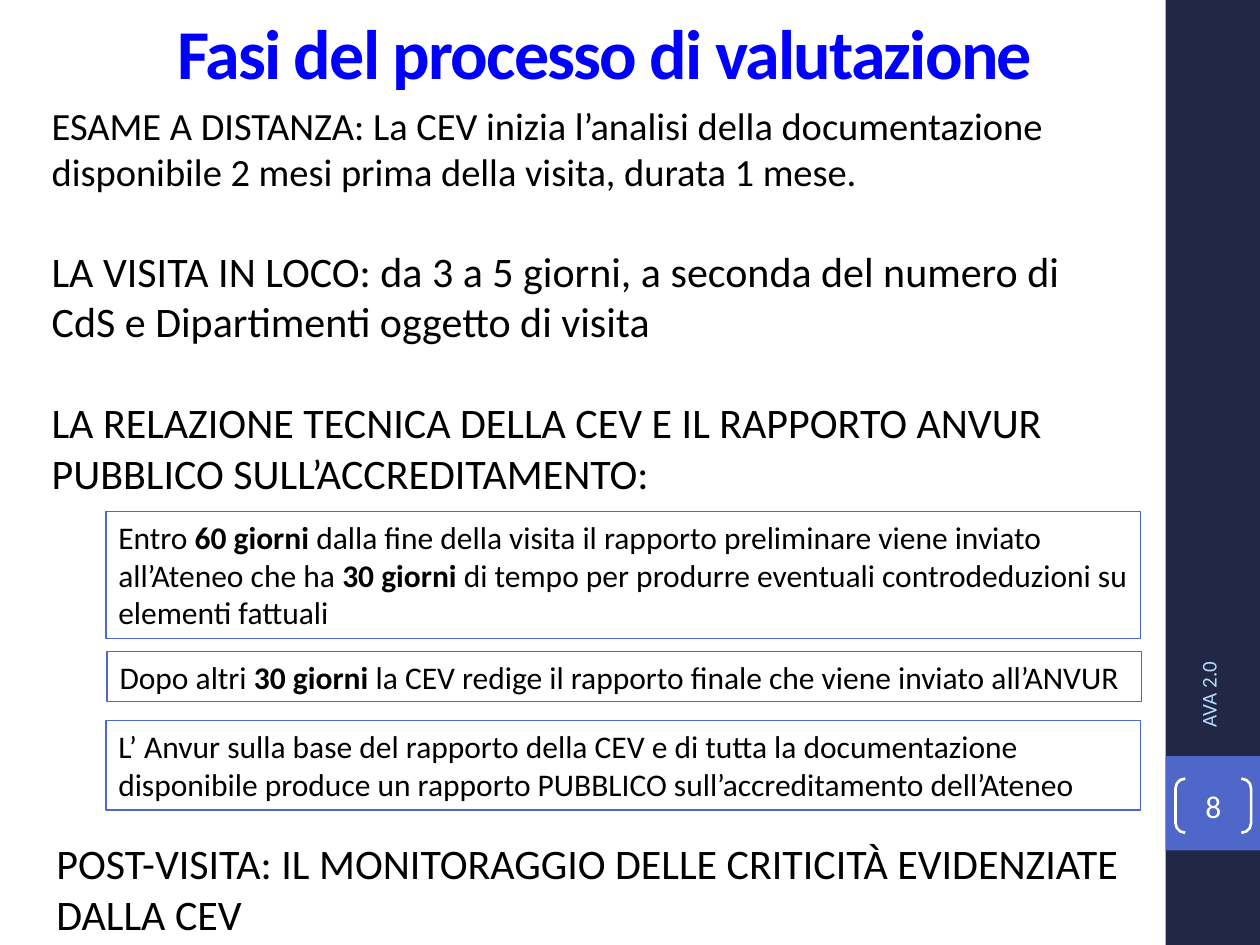
"""Build the slide on the phases of the evaluation process."""
from pptx import Presentation
from pptx import util as u
from pptx.dml.color import RGBColor
from pptx.enum import shapes, text
from pptx.oxml.ns import qn

COLS, ROWS = 40, 30
NAVY, BLUE, PALE, WHITE, BLACK = "212745", "4E67C8", "B4DCFA", "FFFFFF", "000000"


def tint(hue):
    """Turn a hex string into a colour."""
    return RGBColor.from_string(hue)


class Deck:
    """Hold the style and the current slide."""

    font = "Calibri"

    def __init__(self):
        """Open a deck with one title and body slide."""
        self.prs = Presentation()
        self.prs.slide_width, self.prs.slide_height = u.Inches(10), u.Inches(7.5)
        self.slide = self.prs.slides.add_slide(self.prs.slide_layouts[1])

    def box(self, col, row, wide, high):
        """Turn grid columns and rows into lengths."""
        x, y = self.prs.slide_width / COLS, self.prs.slide_height / ROWS
        return [round(n) for n in (col * x, row * y, wide * x, high * y)]

    def place(self, item, area):
        """Move a placeholder to an area of the grid."""
        item.left, item.top, item.width, item.height = self.box(*area)
        return item

    def label(self, item, lines, size, hue=BLACK, align=text.PP_ALIGN.LEFT,
              anchor=text.MSO_ANCHOR.TOP):
        """Fill in lines, with bold parts between asterisks."""
        frame = item.text_frame
        frame.word_wrap = True
        frame.auto_size = text.MSO_AUTO_SIZE.NONE
        frame.vertical_anchor = anchor
        for i, line in enumerate(lines):
            para = frame.add_paragraph() if i else frame.paragraphs[0]
            para.alignment = align
            for j, part in enumerate(line.split("*")):
                if not part:
                    continue
                run = para.add_run()
                run.text = part
                run.font.bold = j % 2 == 1
                run.font.name, run.font.size = self.font, u.Pt(size)
                run.font.color.rgb = tint(hue)
        return frame

    def title(self, words, area, size, hue):
        """Set the title in bold, tight letters."""
        item = self.place(self.slide.shapes.title, area)
        frame = self.label(item, [f"*{words}*"], size, hue,
                           text.PP_ALIGN.CENTER, text.MSO_ANCHOR.MIDDLE)
        frame.paragraphs[0].runs[0].font._element.set("spc", "-100")

    def body(self, lines, area, sizes, gap):
        """Set the main list without bullets."""
        item = self.place(self.slide.placeholders[1], area)
        frame = self.label(item, lines, sizes[0])
        for i, (para, size) in enumerate(zip(frame.paragraphs, sizes)):
            para.space_before = u.Pt(gap if i else 0)
            para.runs[0].font.size = u.Pt(size)
            props = para._p.get_or_add_pPr()
            props.set("marL", "0")
            props.set("indent", "0")
            props.append(props.makeelement(qn("a:buNone"), {}))

    def shape(self, area, fill=None, line=None, width=0.75, kind="RECTANGLE"):
        """Add a preset shape."""
        item = self.slide.shapes.add_shape(
            getattr(shapes.MSO_SHAPE, kind), *self.box(*area))
        item.shadow.inherit = False
        if fill:
            item.fill.solid()
            item.fill.fore_color.rgb = tint(fill)
        else:
            item.fill.background()
        if line:
            item.line.color.rgb = tint(line)
            item.line.width = u.Pt(width)
        else:
            item.line.fill.background()
        return item

    def note(self, words, area, size, hue=BLACK, turn=0, **style):
        """Add a text box."""
        item = self.slide.shapes.add_textbox(*self.box(*area))
        item.rotation = turn
        self.label(item, [words], size, hue, **style)

    def badge(self, words, area):
        """Add the page number between brackets."""
        item = self.shape(area, line=WHITE, width=1.5, kind="DOUBLE_BRACKET")
        item.adjustments[0] = 0.18
        frame = self.label(item, [words], 18, WHITE,
                           text.PP_ALIGN.CENTER, text.MSO_ANCHOR.MIDDLE)
        frame.margin_left = frame.margin_right = 0
        frame.margin_top = frame.margin_bottom = 0


def main():
    """Build and save the slide."""
    deck = Deck()
    deck.shape((37, 0, 3, ROWS), NAVY)
    deck.shape((37, 24, 3, 3), BLUE)
    deck.body([
        "ESAME A DISTANZA: La CEV inizia l’analisi della documentazione "
        "disponibile 2 mesi prima della visita, durata 1 mese.",
        "LA VISITA IN LOCO: da 3 a 5 giorni, a seconda del numero di CdS e "
        "Dipartimenti oggetto di visita",
        "LA RELAZIONE TECNICA DELLA CEV E IL RAPPORTO ANVUR PUBBLICO "
        "SULL’ACCREDITAMENTO:",
    ], (1.24, 3.04, 34.96, 13.04), (22, 24, 24), 29)
    deck.title("Fasi del processo di valutazione", (2.2, 0.52, 34, 2.2), 40, "0000FF")
    deck.badge("8", (37.32, 24.72, 2.4, 1.72))
    deck.note("AVA 2.0", (31.44, 15.76, 13.84, 1.6), 12, PALE, 270,
              anchor=text.MSO_ANCHOR.MIDDLE)
    deck.note("POST-VISITA: IL MONITORAGGIO DELLE CRITICITÀ EVIDENZIATE DALLA CEV",
              (1.4, 26.4, 34.96, 3.64), 24)
    steps = [
        (3.36, 16.24, 4.04,
         "Entro *60 giorni *dalla fine della visita il rapporto preliminare viene "
         "inviato all’Ateneo che ha *30 giorni *di tempo per produrre eventuali "
         "controdeduzioni su elementi fattuali"),
        (3.4, 20.68, 1.6,
         "Dopo altri *30 giorni *la CEV redige il rapporto finale che viene "
         "inviato all’ANVUR"),
        (3.36, 22.88, 2.84,
         "L’ Anvur sulla base del rapporto della CEV e di tutta la documentazione "
         "disponibile produce un rapporto PUBBLICO sull’accreditamento dell’Ateneo"),
    ]
    for col, row, high, words in steps:
        deck.label(deck.shape((col, row, 32.84, high), line=BLUE), [words], 18)
    deck.prs.save("out.pptx")


if __name__ == "__main__":
    main()
